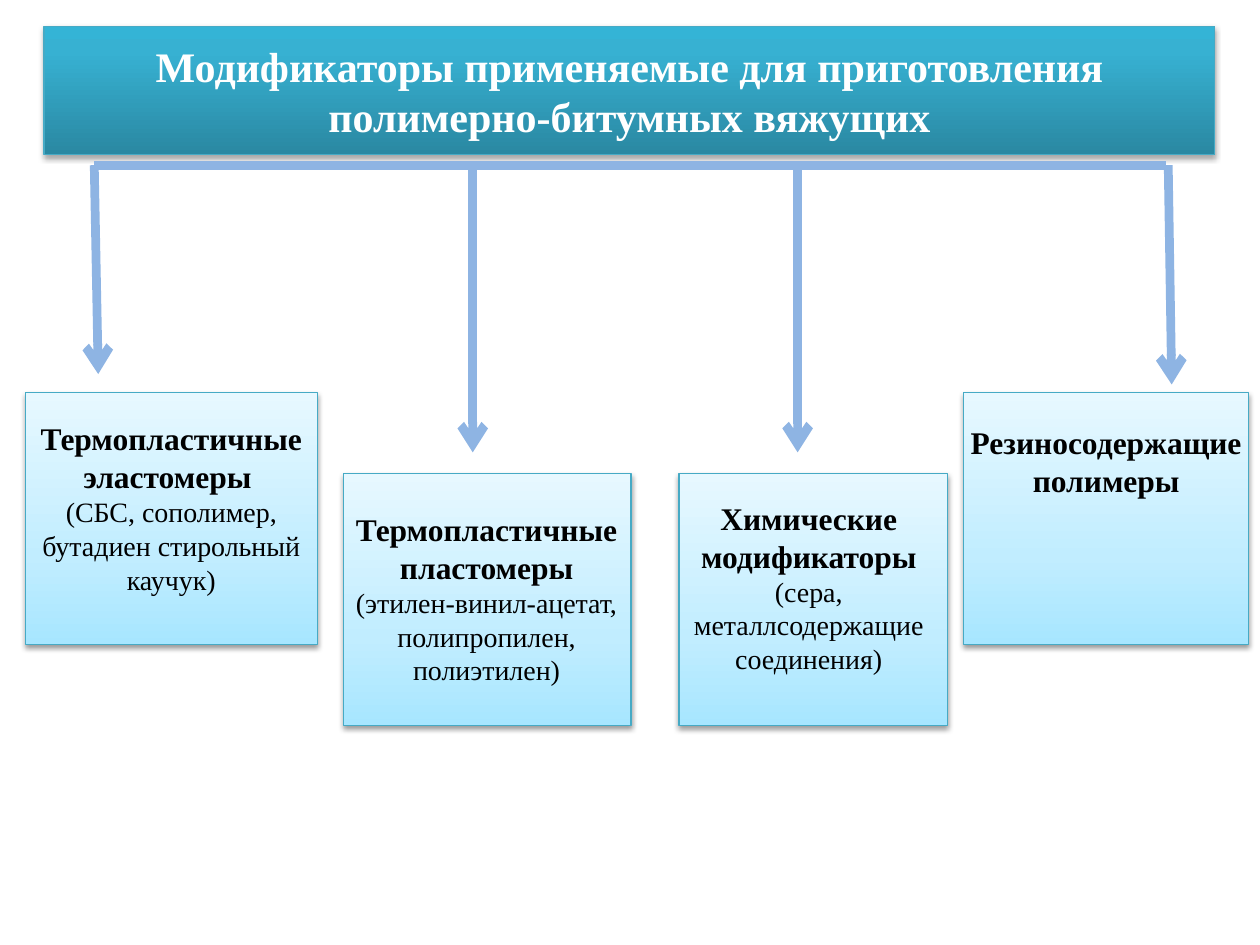
"""Builds a slide that classifies modifiers for polymer-bitumen binders."""
from copy import deepcopy

from lxml import etree
from pptx import Presentation
from pptx import util as u
from pptx.dml.color import RGBColor
from pptx.enum import shapes, text
from pptx.oxml import ns

WHITE = RGBColor(0xFF, 0xFF, 0xFF)
BLACK = RGBColor(0x00, 0x00, 0x00)
BORDER = RGBColor(0x46, 0xAA, 0xC5)
ARROW = RGBColor(0x8E, 0xB4, 0xE3)
CARD_STOPS = [
    (0, RGBColor(0xA7, 0xE6, 0xFF)),
    (0.35, RGBColor(0xC1, 0xED, 0xFF)),
    (1, RGBColor(0xE7, 0xF8, 0xFF)),
]
TITLE_STOPS = [
    (0, RGBColor(0x2A, 0x88, 0xA2)),
    (0.8, RGBColor(0x37, 0xB1, 0xD2)),
    (1, RGBColor(0x34, 0xB4, 0xD6)),
]


class Diagram:
    font = "Times New Roman"

    def __init__(self, slide):
        self.slide = slide

    def panel(self, box, stops, shadow_alpha):
        panel = self.slide.shapes.add_shape(
            shapes.MSO_SHAPE.RECTANGLE, *map(u.Cm, box))
        panel.line.color.rgb = BORDER
        panel.line.width = u.Pt(0.75)
        self.gradient(panel, stops)
        self.shadow(panel, shadow_alpha)
        return panel

    def gradient(self, panel, stops):
        panel.fill.gradient()
        panel.fill.gradient_angle = 90
        stop_list = panel._element.spPr.find(".//" + ns.qn("a:gsLst"))
        stop_list.append(deepcopy(stop_list[-1]))
        for stop, (position, color) in zip(panel.fill.gradient_stops, stops):
            stop.position = position
            stop.color.rgb = color

    def shadow(self, panel, alpha):
        panel.shadow.inherit = False
        effects = panel._element.spPr.find(ns.qn("a:effectLst"))
        outer = etree.SubElement(
            effects, ns.qn("a:outerShdw"), blurRad="40000", dist="20000",
            dir="5400000", rotWithShape="0")
        color = etree.SubElement(outer, ns.qn("a:srgbClr"), val="000000")
        etree.SubElement(color, ns.qn("a:alpha"), val=str(alpha * 1000))

    def title(self, box, wording):
        frame = self.panel(box, TITLE_STOPS, 35).text_frame
        frame.text = wording
        frame.word_wrap = True
        frame.vertical_anchor = text.MSO_ANCHOR.MIDDLE
        frame.paragraphs[0].alignment = text.PP_ALIGN.CENTER
        self.style(frame.paragraphs[0].runs[0], 24, True, WHITE)

    def label(self, box, paragraphs):
        frame = self.slide.shapes.add_textbox(*map(u.Cm, box)).text_frame
        frame.word_wrap = True
        frame.auto_size = text.MSO_AUTO_SIZE.SHAPE_TO_FIT_TEXT
        for index, parts in enumerate(paragraphs):
            paragraph = frame.add_paragraph() if index else frame.paragraphs[0]
            paragraph.alignment = text.PP_ALIGN.CENTER
            for wording in parts:
                run = paragraph.add_run()
                run.text = wording
                example = wording.startswith("(")
                self.style(run, 16 if example else 18, not example, BLACK)

    def style(self, run, size, bold, color):
        run.font.name = self.font
        run.font.size = u.Pt(size)
        run.font.bold = bold
        run.font.color.rgb = color

    def line(self, ends, arrow=False):
        line = self.slide.shapes.add_connector(
            shapes.MSO_CONNECTOR.STRAIGHT, *map(u.Cm, ends))
        line.line.color.rgb = ARROW
        line.line.width = u.Pt(5)
        if arrow:
            etree.SubElement(
                line.line._get_or_add_ln(), ns.qn("a:tailEnd"), type="arrow")
        etree.SubElement(line._element.spPr, ns.qn("a:effectLst"))


def main():
    deck = Presentation()
    deck.slide_width, deck.slide_height = u.Cm(25.4), u.Cm(19.05)
    diagram = Diagram(deck.slides.add_slide(deck.slide_layouts[6]))

    outer_top, inner_top, card_height = 7.92, 9.55, 5.08
    groups = [
        ((0.51, outer_top, 5.89), (1.9, 3.33, 1.98, 7.54),
         (0.51, 8.33, 5.89, 3.84),
         [["Термопластичные эластомеры "],
          ["(СБС, сополимер, бутадиен стирольный каучук)"]]),
        ((6.93, inner_top, 5.79), (9.53, 3.38, 9.53, 9.12),
         (6.76, 10.16, 6.1, 3.84),
         [["Термопластичные пластомеры ",
           "(этилен-винил-ацетат, полипропилен, полиэтилен)"]]),
        ((13.69, inner_top, 5.41), (16.08, 3.38, 16.08, 9.12),
         (13.31, 9.93, 5.99, 3.84),
         [["Химические модификаторы ",
           "(сера, металлсодержащие соединения)"]]),
        ((19.43, outer_top, 5.74), (23.55, 3.33, 23.62, 7.75),
         (19.2, 8.41, 6.2, 1.8),
         [["Резиносодержащие полимеры"]]),
    ]

    diagram.title(
        (0.89, 0.53, 23.6, 2.59),
        "Модификаторы применяемые для приготовления "
        "полимерно-битумных вяжущих")
    diagram.line((1.9, 3.33, 23.5, 3.33))
    for card, arrow, label, paragraphs in groups:
        diagram.panel((*card, card_height), CARD_STOPS, 38)
        diagram.line(arrow, arrow=True)
        diagram.label(label, paragraphs)

    deck.save("out.pptx")


if __name__ == "__main__":
    main()
